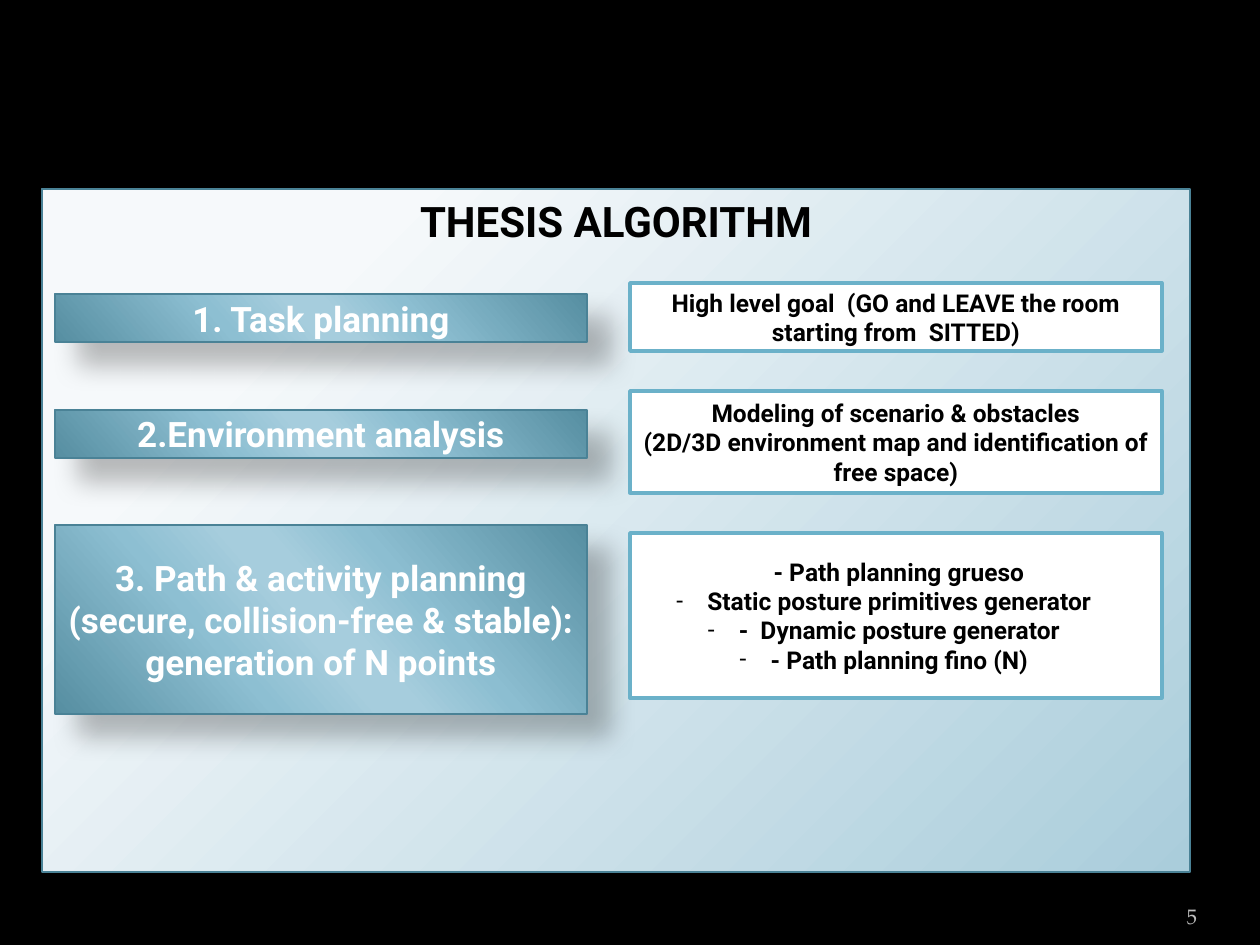
from lxml.etree import SubElement
from pptx import Presentation
from pptx.dml.color import RGBColor
from pptx.enum.shapes import MSO_SHAPE
from pptx.enum.text import MSO_ANCHOR, PP_ALIGN
from pptx.oxml.ns import qn
from pptx.util import Pt

EMU_PER_PX = 914400 / 126

BLACK = RGBColor(0x00, 0x00, 0x00)
WHITE = RGBColor(0xFF, 0xFF, 0xFF)
GREY = RGBColor(0xBD, 0xBD, 0xBD)
TEAL = RGBColor(0x4A, 0x82, 0x96)
SKY = RGBColor(0x6B, 0xB1, 0xC9)
STEEL = RGBColor(0x56, 0x8E, 0xA1)
POOL = RGBColor(0x8C, 0xBE, 0xD1)
POOL_LIGHT = RGBColor(0x8D, 0xBF, 0xD2)
MIST = RGBColor(0xA6, 0xCD, 0xDD)
PALE = RGBColor(0xF6, 0xF9, 0xFB)
HAZE = RGBColor(0xAA, 0xCD, 0xDB)

PANEL_STOPS = [(20, PALE), (100, HAZE)]
STEP_STOPS = [(0, STEEL), (33, POOL), (47, MIST), (53, MIST), (68, POOL_LIGHT), (100, STEEL)]

STEP_LEFT, DETAIL_LEFT, COLUMN_WIDTH = 55, 630, 532

# Each step: top, height, text
STEPS = [
    (294, 48, "1. Task planning"),
    (410, 48, "2.Environment analysis"),
    (525, 189, "3. Path & activity planning (secure, collision-free & stable): "
               "generation of N points"),
]
# Each detail: top, height, paragraphs as (text, has dash bullet)
DETAILS = [
    (283, 68, [("High level goal  (GO and LEAVE the room starting from  SITTED)", False)]),
    (391, 102, [("Modeling of scenario & obstacles", False),
                ("(2D/3D environment map and identification of free space)", False)]),
    (533, 165, [(" - Path planning grueso", False),
                ("Static posture primitives generator", True),
                ("-  Dynamic posture generator", True),
                ("- Path planning fino (N)", True)]),
]


def px(length):
    return round(length * EMU_PER_PX)


def add_element(parent, tag, **attributes):
    return SubElement(parent, qn(tag), {key: str(value) for key, value in attributes.items()})


def add_color(parent, color, alpha=None):
    node = add_element(parent, "a:srgbClr", val=color)
    if alpha is not None:
        add_element(node, "a:alpha", val=alpha * 1000)


def add_gradient(box, stops, angle=None):
    """Linear at the given angle, or circular from the top left corner."""
    gradient = add_element(box._element.spPr, "a:gradFill", rotWithShape=1)
    stop_list = add_element(gradient, "a:gsLst")
    for percent, color in stops:
        add_color(add_element(stop_list, "a:gs", pos=percent * 1000), color)
    if angle is None:
        circle = add_element(gradient, "a:path", path="circle")
        add_element(circle, "a:fillToRect", l=-15000, t=-15000, r=115000, b=115000)
    else:
        add_element(gradient, "a:lin", ang=angle * 60000, scaled=0)


def add_shadow(box, alpha, blur, distance):
    effects = add_element(box._element.spPr, "a:effectLst")
    shadow = add_element(effects, "a:outerShdw", blurRad=Pt(blur), dist=Pt(distance),
                         dir=45 * 60000, algn="tl", rotWithShape=0)
    add_color(shadow, BLACK, alpha)


def add_box(slide, left, top, width, height):
    return slide.shapes.add_shape(MSO_SHAPE.RECTANGLE, px(left), px(top), px(width), px(height))


def set_line(box, color, width):
    box.line.color.rgb = color
    box.line.width = Pt(width)


def add_dash(paragraph):
    properties = paragraph._p.get_or_add_pPr()
    properties.set("marL", str(px(7)))
    properties.set("indent", str(px(-31)))
    add_element(properties, "a:buFont", typeface="Roboto")
    add_element(properties, "a:buChar", char="-")


def write(shape, paragraphs, size, color, anchor=MSO_ANCHOR.MIDDLE,
          align=PP_ALIGN.CENTER, font="Roboto", bold=True):
    frame = shape.text_frame
    frame.word_wrap = True
    frame.vertical_anchor = anchor
    for index, (text, dashed) in enumerate(paragraphs):
        paragraph = frame.add_paragraph() if index else frame.paragraphs[0]
        paragraph.alignment = align
        if dashed:
            add_dash(paragraph)
        run = paragraph.add_run()
        run.text = text
        run.font.name = font
        run.font.size = Pt(size)
        run.font.bold = bold
        run.font.color.rgb = color


def add_panel(slide):
    panel = add_box(slide, 42, 189, 1148, 683)
    add_gradient(panel, PANEL_STOPS)
    set_line(panel, TEAL, 0.75)
    add_shadow(panel, 35, 10.2, 8)
    write(panel, [("THESIS ALGORITHM", False)], 24, BLACK, MSO_ANCHOR.TOP)


def add_step(slide, top, height, text):
    step = add_box(slide, STEP_LEFT, top, COLUMN_WIDTH, height)
    add_gradient(step, STEP_STOPS, angle=139)
    set_line(step, TEAL, 0.75)
    add_shadow(step, 26, 15, 18)
    write(step, [(text, False)], 20, WHITE)


def add_detail(slide, top, height, paragraphs):
    detail = add_box(slide, DETAIL_LEFT, top, COLUMN_WIDTH, height)
    detail.shadow.inherit = False
    detail.fill.solid()
    detail.fill.fore_color.rgb = WHITE
    set_line(detail, SKY, 2)
    write(detail, paragraphs, 14, BLACK)


def add_page_number(slide):
    page_number = slide.shapes.add_textbox(px(1092), px(885), px(105), px(50))
    page_number.text_frame.margin_left = page_number.text_frame.margin_right = 0
    write(page_number, [("5", False)], 12, GREY, MSO_ANCHOR.BOTTOM, PP_ALIGN.RIGHT,
          "TeX Gyre Pagella", bold=False)


def main():
    deck = Presentation()
    deck.slide_width, deck.slide_height = px(1260), px(945)
    slide = deck.slides.add_slide(deck.slide_layouts[6])
    slide.background.fill.solid()
    slide.background.fill.fore_color.rgb = BLACK

    # Panel with its heading
    add_panel(slide)

    # Steps on the left, details on the right
    for step in STEPS:
        add_step(slide, *step)
    for detail in DETAILS:
        add_detail(slide, *detail)

    # Footer
    add_page_number(slide)
    deck.save("out.pptx")


if __name__ == "__main__":
    main()
